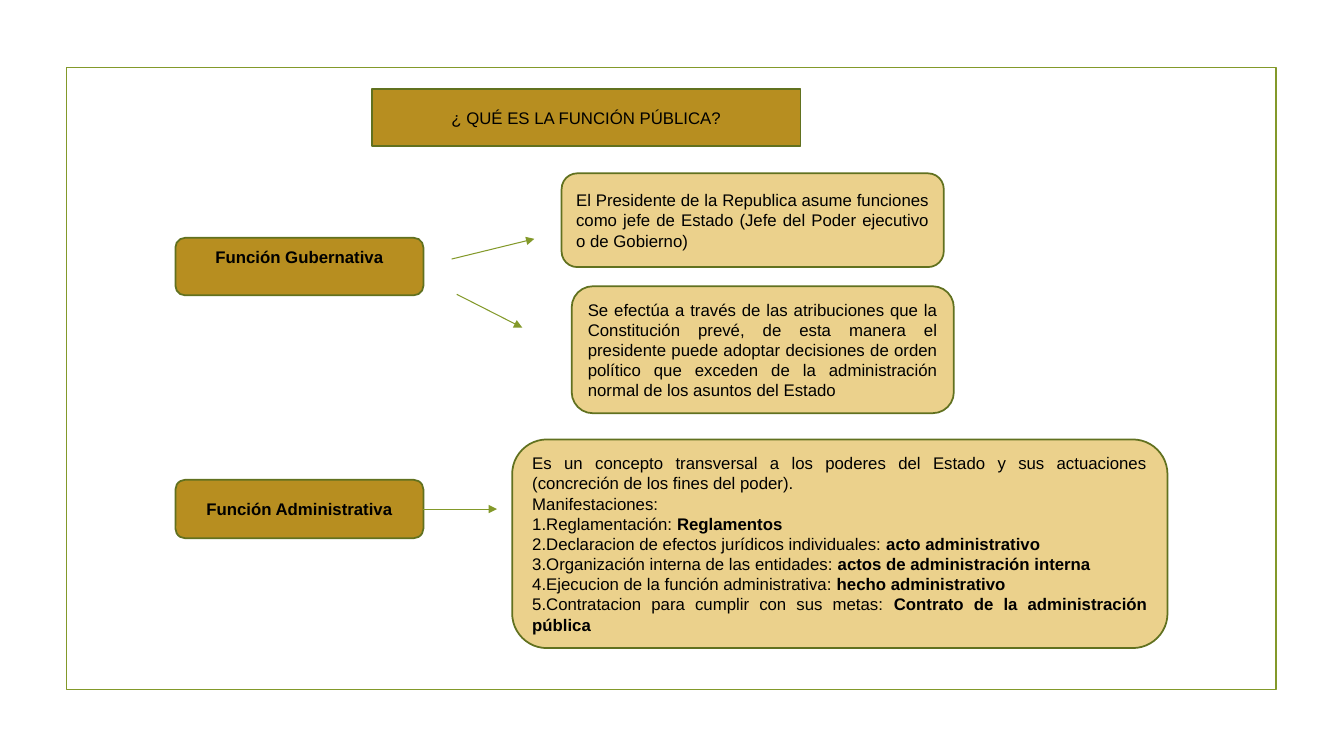
from dataclasses import dataclass

from lxml import etree
from pptx import Presentation
from pptx import util as u
from pptx.dml.color import RGBColor
from pptx.enum import shapes, text
from pptx.oxml.ns import qn

RECT = shapes.MSO_SHAPE.RECTANGLE
ROUNDED = shapes.MSO_SHAPE.ROUNDED_RECTANGLE
CENTER = text.PP_ALIGN.CENTER
JUSTIFY = text.PP_ALIGN.JUSTIFY


@dataclass(frozen=True)
class Theme:
    font: str = "Arial"
    size: float = 12
    ink: str = "000000"
    gold: str = "B78E20"
    sand: str = "EBD18C"
    green: str = "83992A"
    outline: str = "61711F"
    border: float = 1.25
    arrow: float = 0.75


def px(length):
    """100 px to the inch."""
    return u.Emu(length * 9144)


class Board:
    def __init__(self, slide, theme):
        self.slide = slide
        self.theme = theme

    def stroke(self, line, color, width):
        line.color.rgb = RGBColor.from_string(color)
        line.width = u.Pt(width)

    def panel(self, area, kind=RECT, fill=None, outline=None):
        shape = self.slide.shapes.add_shape(kind, *map(px, area))
        shape.shadow.inherit = False
        if fill:
            shape.fill.solid()
            shape.fill.fore_color.rgb = RGBColor.from_string(fill)
        else:
            shape.fill.background()
        self.stroke(shape.line, outline or self.theme.outline, self.theme.border)
        return shape

    def box(self, area, lines, kind=ROUNDED, fill=None, align=JUSTIFY,
            bold=False, bottom=5):
        """Each line is a (plain, bold ending) pair."""
        shape = self.panel(area, kind, fill or self.theme.sand)
        frame = shape.text_frame
        frame.word_wrap = True
        frame.vertical_anchor = text.MSO_ANCHOR.MIDDLE
        frame.margin_bottom = px(bottom)
        for i, (plain, ending) in enumerate(lines):
            paragraph = frame.add_paragraph() if i else frame.paragraphs[0]
            paragraph.alignment = align
            font = paragraph.font
            font.name = self.theme.font
            font.size = u.Pt(self.theme.size)
            font.bold = bold
            font.color.rgb = RGBColor.from_string(self.theme.ink)
            paragraph.add_run().text = plain
            if ending:
                run = paragraph.add_run()
                run.text = ending
                run.font.bold = True
        return shape

    def heading(self, area, label, **style):
        return self.box(area, [(label, "")], fill=self.theme.gold, align=CENTER, **style)

    def arrow(self, start, end, source=None):
        arrow = self.slide.shapes.add_connector(
            shapes.MSO_CONNECTOR.STRAIGHT, *map(px, start + end))
        if source is not None:
            arrow.begin_connect(source, 3)
        self.stroke(arrow.line, self.theme.green, self.theme.arrow)
        line = arrow.line._get_or_add_ln()
        etree.SubElement(line, qn("a:tailEnd"), type="triangle")
        etree.SubElement(arrow._element.spPr, qn("a:effectLst"))


def main():
    deck = Presentation()
    deck.slide_width, deck.slide_height = px(1333), px(750)
    theme = Theme()
    board = Board(deck.slides.add_slide(deck.slide_layouts[6]), theme)

    # Frame and title
    board.panel((66, 67, 1200, 617), outline=theme.green)
    board.heading((369, 88, 425, 57), "¿ QUÉ ES LA FUNCIÓN PÚBLICA?", kind=RECT)

    # Government function: its label sits above the middle
    board.heading((174, 236, 246, 57), "Función Gubernativa", bold=True, bottom=25)
    board.box((557, 172, 379, 93), [(
        "El Presidente de la Republica asume funciones como jefe de Estado "
        "(Jefe del Poder ejecutivo o de Gobierno)", "")])
    board.box((567, 284, 379, 126), [(
        "Se efectúa a través de las atribuciones que la Constitución prevé, "
        "de esta manera el presidente puede adoptar decisiones de orden político "
        "que exceden de la administración normal de los asuntos del Estado", "")])
    board.arrow((448, 257), (530, 237))
    board.arrow((453, 292), (518, 325))

    # Administrative function
    administrativa = board.heading((174, 476, 246, 58), "Función Administrativa", bold=True)
    manifestaciones = [
        ("Reglamentación", "Reglamentos"),
        ("Declaracion de efectos jurídicos individuales", "acto administrativo"),
        ("Organización interna de las entidades", "actos de administración interna"),
        ("Ejecucion de la función administrativa", "hecho administrativo"),
        ("Contratacion para cumplir con sus metas", "Contrato de la administración pública"),
    ]
    board.box((508, 436, 650, 207), [
        ("Es un concepto transversal a los poderes del Estado y sus actuaciones "
         "(concreción de los fines del poder).", ""),
        ("Manifestaciones:", ""),
        *((f"{number}.{activity}: ", result)
          for number, (activity, result) in enumerate(manifestaciones, 1)),
    ])
    board.arrow((420, 505), (493, 505), source=administrativa)

    deck.save("out.pptx")


if __name__ == "__main__":
    main()
